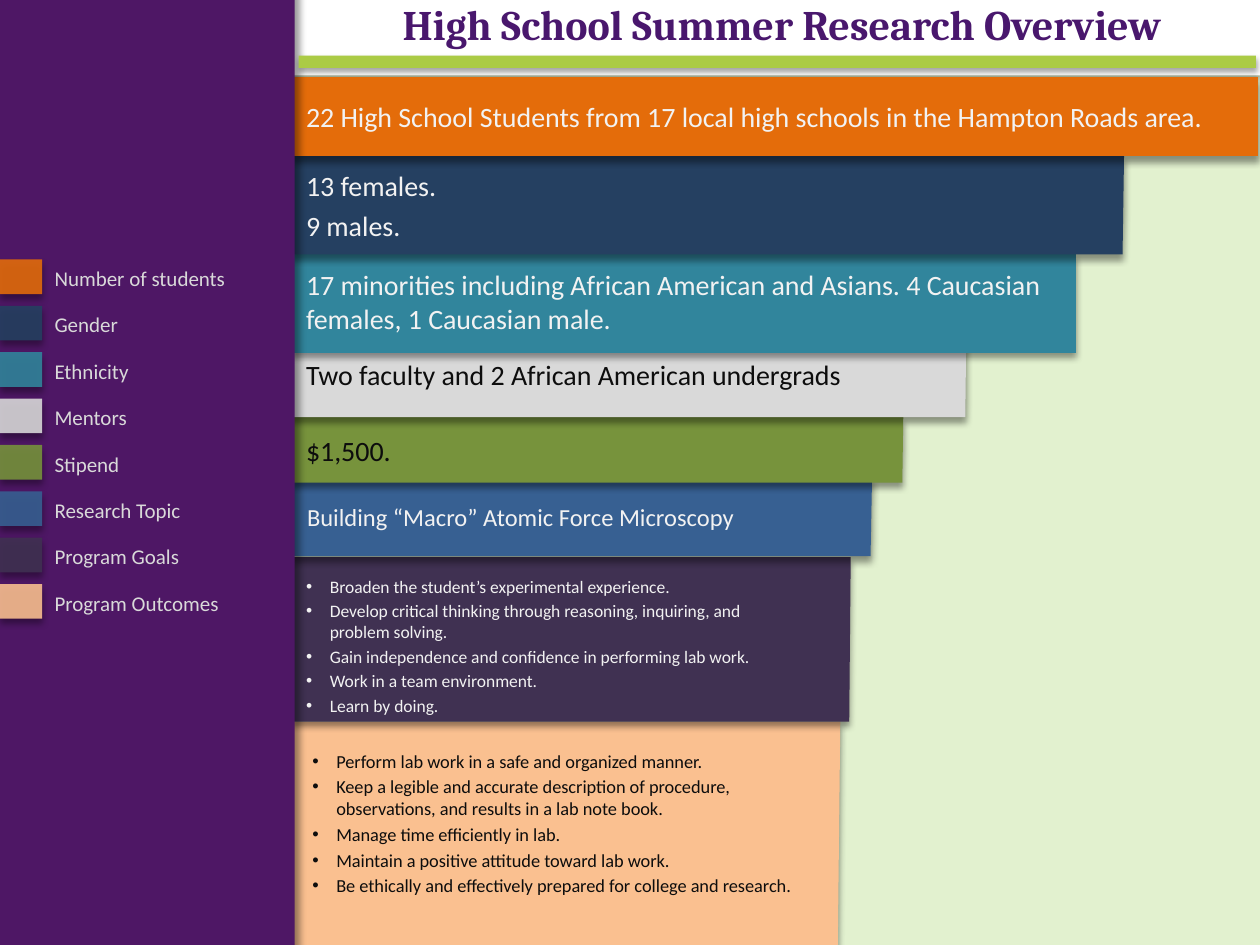
"""Build the summer research overview slide."""
from lxml import etree
from pptx import Presentation, util as u
from pptx.dml.color import RGBColor
from pptx.enum import shapes, text
from pptx.oxml import ns

LIGHT, DARK, PALE = "F2F2F2", "0D0D0D", "D9D9D9"
LEFT = 5.9
# label, fill, (top, bottom, upper right, lower right), text box, size, ink, lines
BANDS = [
    ("Number of students", "E46C0A", (1.55, 3.15, 25.37, 25.37), (5.92, 1.55, 19.02, 1.6), 16, LIGHT,
     ["22 High School Students from 17 local high schools in the Hampton Roads area."]),
    ("Gender", "254061", (3.15, 5.13, 22.66, 22.63), (5.92, 3.15, 13.54, 1.98), 16, LIGHT,
     ["13 females.", "9 males."]),
    ("Ethnicity", "31859C", (5.13, 7.11, 21.69, 21.69), (5.92, 5.03, 15.77, 2.08), 16, LIGHT,
     ["17 minorities including African American and Asians. 4 Caucasian females, 1 Caucasian male."]),
    ("Mentors", "D9D9D9", (6.68, 8.41, 19.48, 19.46), (5.92, 6.68, 13.54, 1.73), 16, DARK,
     ["Two faculty and 2 African American undergrads"]),
    ("Stipend", "77933C", (8.41, 9.73, 18.21, 18.19), (5.92, 8.41, 13.54, 1.32), 16, DARK,
     ["$1,500."]),
    ("Research Topic", "376092", (9.63, 11.21, 17.58, 17.55), (5.94, 9.63, 11.35, 1.58), 14, LIGHT,
     ["Building “Macro” Atomic Force Microscopy"]),
    ("Program Goals", "403152", (11.23, 14.55, 17.15, 17.12), (5.92, 12.04, 10.52, 1.96), 10, LIGHT,
     ["Broaden the student’s experimental experience.",
      "Develop critical thinking through reasoning, inquiring, and problem solving.",
      "Gain independence and confidence in performing lab work.",
      "Work in a team environment.",
      "Learn by doing."]),
    ("Program Outcomes", "FAC090", (14.55, 19.05, 16.94, 16.89), (6.05, 14.88, 10.74, 3.43), 10.5, DARK,
     ["Perform lab work in a safe and organized manner.",
      "Keep a legible and accurate description of procedure, observations, and results in a lab note book.",
      "Manage time efficiently in lab.",
      "Maintain a positive attitude toward lab work.",
      "Be ethically and effectively prepared for college and research."]),
]
KEY_TOP, KEY_STEP = 5.23, 0.935

deck = Presentation()
deck.slide_width, deck.slide_height = u.Cm(25.4), u.Cm(19.05)
slide = deck.slides.add_slide(deck.slide_layouts[6])


def tint(code):
    return RGBColor.from_string(code)


def sub(node, tag, **attrs):
    return etree.SubElement(node, ns.qn("a:" + tag), {k: str(v) for k, v in attrs.items()})


def paint(shape, code, alpha=None, blur=4, dist=3, turn=90, dark=40):
    shape.fill.solid()
    shape.fill.fore_color.rgb = tint(code)
    shape.line.fill.background()
    shape.shadow.inherit = False
    props = shape._element.spPr
    if alpha:
        sub(props.find(".//" + ns.qn("a:srgbClr")), "alpha", val=alpha * 1000)
    cast = sub(props.find(ns.qn("a:effectLst")), "outerShdw", blurRad=u.Pt(blur),
               dist=u.Pt(dist), dir=turn * 60000, algn="ctr", rotWithShape=0)
    sub(sub(cast, "srgbClr", val="000000"), "alpha", val=dark * 1000)


def block(spot, code, **look):
    kind = shapes.MSO_SHAPE.RECTANGLE
    paint(slide.shapes.add_shape(kind, *map(u.Cm, spot)), code, **look)


def band(left, top, foot, upper, lower, code):
    pts = [(left, top), (upper, top), (lower, foot), (left, foot)]
    pts = [(u.Cm(x), u.Cm(y)) for x, y in pts]
    path = slide.shapes.build_freeform(*pts[0])
    path.add_line_segments(pts[1:], close=True)
    paint(path.convert_to_shape(), code)


def write(lines, spot, size, ink, font="Calibri", bold=None, align=None,
          anchor=text.MSO_ANCHOR.TOP, gap=True, dots=False, grow=False):
    frame = slide.shapes.add_textbox(*map(u.Cm, spot)).text_frame
    frame.word_wrap = True
    frame.vertical_anchor = anchor
    if grow:
        frame.auto_size = text.MSO_AUTO_SIZE.SHAPE_TO_FIT_TEXT
    for i, line in enumerate(lines):
        para = frame.paragraphs[0] if i == 0 else frame.add_paragraph()
        para.alignment = align
        run = para.add_run()
        run.text = line
        run.font.size, run.font.name, run.font.bold = u.Pt(size), font, bold
        run.font.color.rgb = tint(ink)
        props = para._p.get_or_add_pPr()
        if gap:
            sub(sub(props, "spcBef"), "spcPct", val=20000)
        if dots:
            props.set("marL", str(u.Cm(0.48)))
            props.set("indent", str(-u.Cm(0.48)))
            sub(props, "buFont", typeface="Arial")
            sub(props, "buChar", char="•")


def main():
    soft = {"blur": 3.1, "dist": 1.8, "dark": 35}
    back = slide.background.fill
    back.solid()
    back.fore_color.rgb = tint("E2F1CF")
    block((0, -0.05, 25.4, 1.57), "FFFFFF", **soft)
    for _, code, edge, spot, size, ink, lines in reversed(BANDS):
        band(LEFT, *edge, code)
        write(lines, spot, size, ink, anchor=text.MSO_ANCHOR.MIDDLE, dots=len(lines) > 2)
    block((-0.2, -0.15, 6.14, 19.35), "4E1765", turn=0)
    for i, (label, code, *_) in enumerate(BANDS):
        top = KEY_TOP + i * KEY_STEP
        block((0, top, 0.85, 0.7), code, alpha=89)
        write([label], (0.85, top, 4.88, 0.76), 12, PALE)
    write(["High School Summer Research Overview"], (6.12, -0.15, 19.28, 1.27), 24, "49176D",
          font="Cambria", bold=True, align=text.PP_ALIGN.CENTER, gap=False, grow=True)
    block((6.02, 1.12, 19.3, 0.25), "ABCB45", **soft)
    deck.save("out.pptx")


if __name__ == "__main__":
    main()
